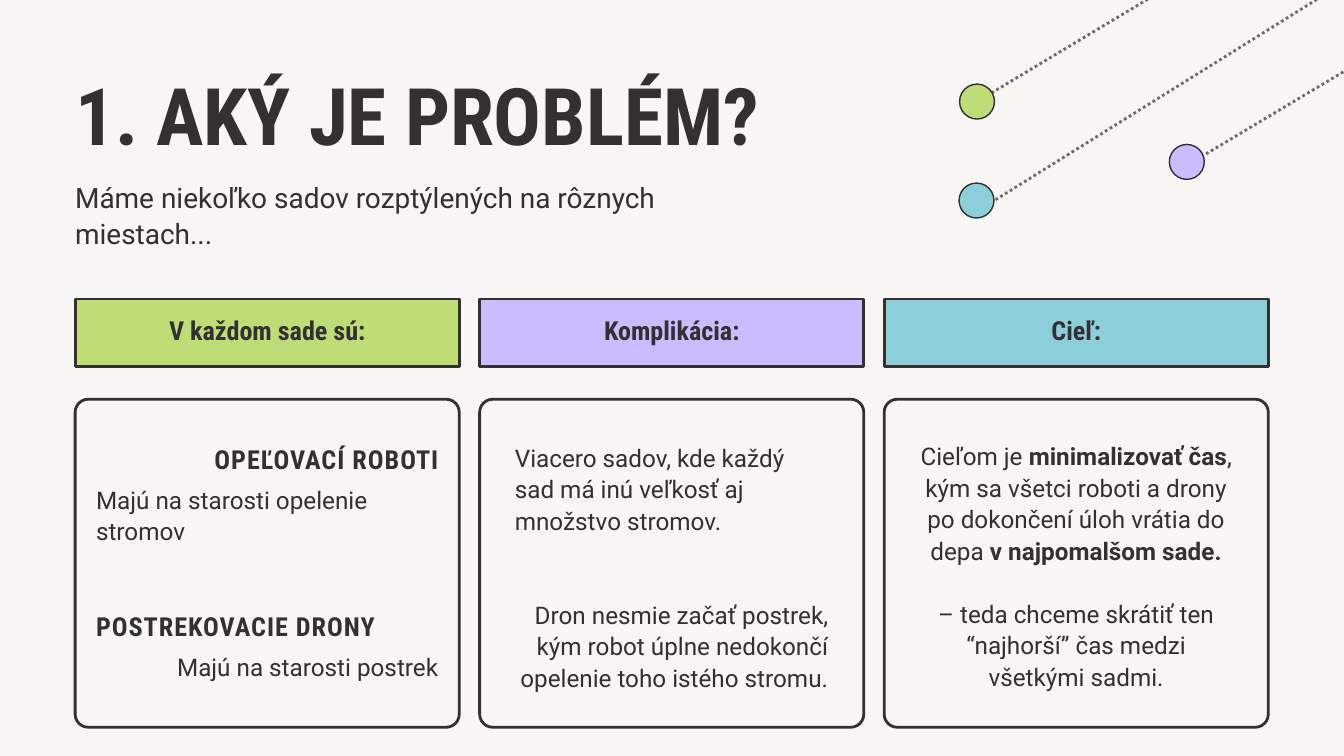
from lxml import etree
from pptx import Presentation
from pptx.dml.color import RGBColor
from pptx.enum import dml, shapes, text
from pptx.oxml import ns
from pptx.util import Cm, Pt

INK = RGBColor(0x32, 0x30, 0x30)
PAPER = RGBColor(0xF8, 0xF6, 0xF4)
GREEN = RGBColor(0xBF, 0xDD, 0x76)
LILAC = RGBColor(0xCD, 0xBB, 0xFF)
TEAL = RGBColor(0x8C, 0xCF, 0xDB)
BODY, HEAD = "Roboto", "Roboto Condensed"
KIND = shapes.MSO_SHAPE
LEFT, MID, RIGHT = text.PP_ALIGN.LEFT, text.PP_ALIGN.CENTER, text.PP_ALIGN.RIGHT

deck = Presentation()
deck.slide_width, deck.slide_height = Cm(50.8), Cm(28.575)
slide = deck.slides.add_slide(deck.slide_layouts[6])
slide.background.fill.solid()
slide.background.fill.fore_color.rgb = PAPER


def draw(kind, x, y, w, h, fill, width):
    form = slide.shapes.add_shape(kind, Cm(x), Cm(y), Cm(w), Cm(h))
    form.shadow.inherit = False
    form.fill.solid()
    form.fill.fore_color.rgb = fill
    form.line.color.rgb = INK
    form.line.width = Pt(width)
    return form


def write(para, runs, size, lead, align=LEFT, face=BODY, space=None):
    """Fill a paragraph; every second run is bold when there are several."""
    para.alignment = align
    para.line_spacing = Pt(lead)
    font = para.font
    font.name, font.size, font.color.rgb = face, Pt(size), INK
    font.bold = face == HEAD
    if space:
        para._p.pPr.find(ns.qn("a:defRPr")).set("spc", str(space))
    for i, words in enumerate(runs):
        run = para.add_run()
        run.text = words
        if i % 2:
            run.font.bold = True


# Cards with a coloured header above each
heads = [("V každom sade sú:", GREEN), ("Komplikácia:", LILAC), ("Cieľ:", TEAL)]
for i, (words, fill) in enumerate(heads):
    x = 2.84 + 15.29 * i
    card = draw(KIND.ROUNDED_RECTANGLE, x, 15.09, 14.52, 12.4, PAPER, 3)
    card.adjustments[0] = 0.04
    band = draw(KIND.RECTANGLE, x, 11.3, 14.52, 2.57, fill, 3)
    frame = band.text_frame
    frame.margin_top, frame.margin_bottom = Cm(0.15), Cm(0.33)
    frame.vertical_anchor = text.MSO_ANCHOR.MIDDLE
    write(frame.paragraphs[0], [words], 28, 33.6, MID, HEAD)

# Dotted trails, each ending in a dot: start, end, dot centre, colour
trails = [
    ((36.93, 3.84), (54.25, -6.55), (36.93, 3.84), GREEN),
    ((36.91, 8.0), (53.57, -2.39), (36.91, 7.58), TEAL),
    ((44.86, 6.25), (62.2, -4.11), (44.86, 6.12), LILAC),
]
for start, end, spot, fill in trails:
    trail = slide.shapes.add_connector(
        shapes.MSO_CONNECTOR.STRAIGHT, *map(Cm, start + end))
    trail.line.color.rgb = INK
    trail.line.width = Pt(3)
    trail.line.dash_style = dml.MSO_LINE.ROUND_DOT
    props = trail._element.spPr
    tint = props.find(".//" + ns.qn("a:srgbClr"))
    etree.SubElement(tint, ns.qn("a:alpha")).set("val", "70000")
    etree.SubElement(props, ns.qn("a:effectLst"))
for start, end, (x, y), fill in trails:
    draw(KIND.OVAL, x - 0.66, y - 0.66, 1.32, 1.32, fill, 1.5)

# Text blocks: place, then the paragraphs as lists of runs, then the style
title = ["1. AKÝ JE PROBLÉM?"]
lead = ["Máme niekoľko sadov rozptýlených na rôznych miestach..."]
size = ["Viacero sadov, kde každý sad má inú veľkosť aj množstvo stromov."]
order = ["Dron nesmie začať postrek, kým robot úplne nedokončí "
         "opelenie toho istého stromu."]
goal = ["Cieľom je ", "minimalizovať čas",
        ", kým sa všetci roboti a drony po dokončení úloh vrátia do depa ",
        "v najpomalšom sade."]
aim = ["– teda chceme skrátiť ten “najhorší” čas medzi všetkými sadmi."]
small = (26, 33.8)
label = (28, 36.4)
blocks = [
    ((2.84, 3.25, 26.16, 3.18), [title], (85, 80.8, LEFT, HEAD)),
    ((2.84, 6.71, 26.16, 2.74), [lead], (30, 39)),
    ((3.63, 16.66, 12.95, 1.27), [["OPEĽOVACÍ ROBOTI"]],
     (*label, RIGHT, HEAD, 110)),
    ((3.63, 18.24, 12.95, 2.34), [["Majú na starosti opelenie stromov"]], small),
    ((3.63, 22.99, 12.95, 1.27), [["POSTREKOVACIE DRONY"]],
     (*label, LEFT, HEAD, 110)),
    ((3.63, 24.56, 12.95, 1.17), [["Majú na starosti postrek"]], (*small, RIGHT)),
    ((19.46, 16.66, 11.86, 3.56), [size], small),
    ((19.46, 22.58, 11.86, 3.56), [order], (*small, RIGHT)),
    ((34.75, 16.59, 11.86, 9.53), [goal, aim], (*small, MID)),
]
for place, paras, style in blocks:
    frame = slide.shapes.add_textbox(*map(Cm, place)).text_frame
    frame.word_wrap = True
    frame.margin_left = frame.margin_right = 0
    frame.margin_top = frame.margin_bottom = 0
    for i, runs in enumerate(paras):
        para = frame.add_paragraph() if i else frame.paragraphs[0]
        write(para, runs, *style)
        if i:
            para.space_before = Pt(33.8)

deck.save("out.pptx")
